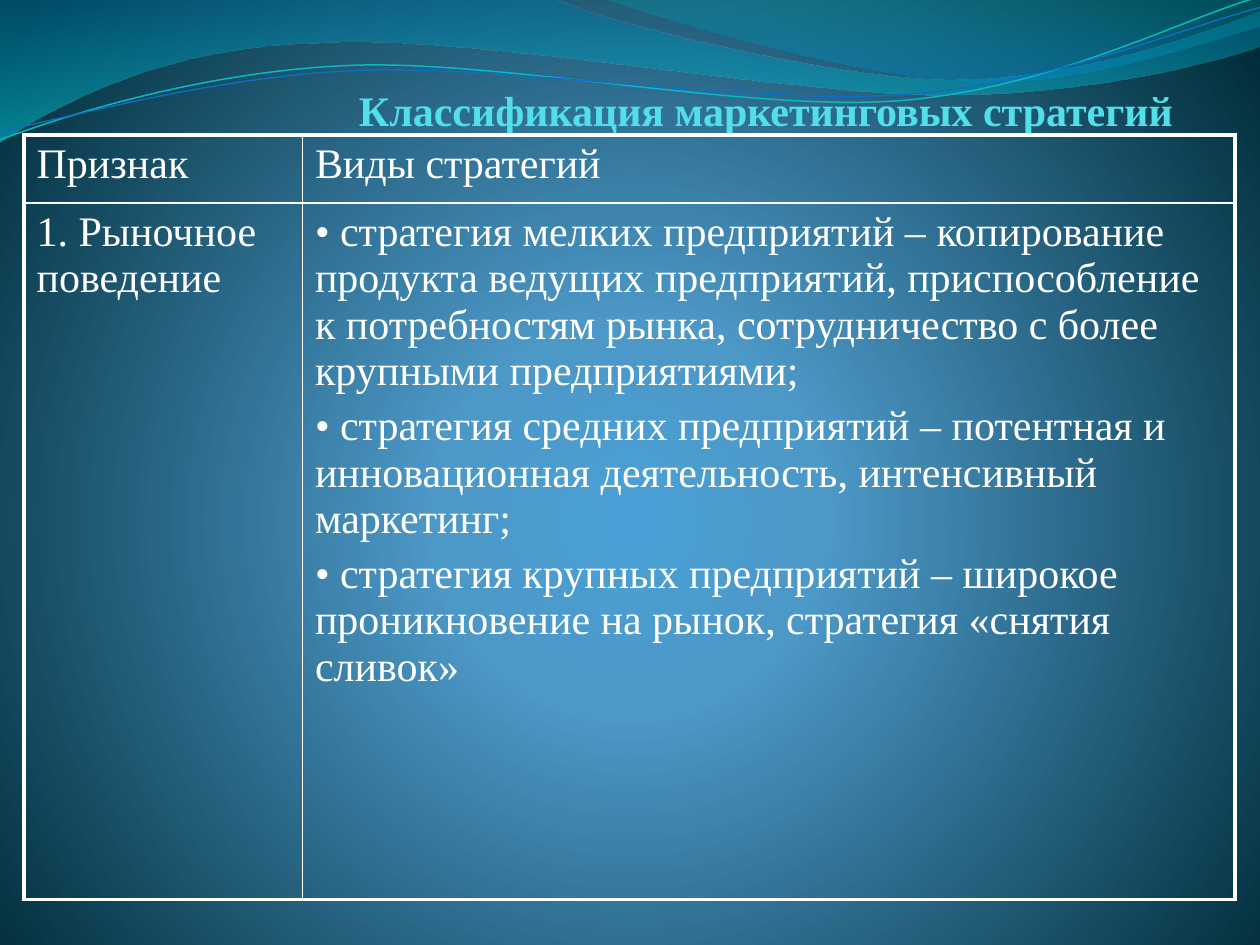
from pptx import Presentation
from pptx import util as u
from pptx.dml.color import RGBColor
from pptx.enum import text
from pptx.oxml import parse_xml
from pptx.oxml.ns import nsdecls, qn

THEME = {
    "font": "Times New Roman", "size": 24, "title": "51E0EA", "body": "FFFFFF",
    "rule": "FFFFFF", "thin": 1, "thick": 2.25,
    "backdrop": [(0, "4AA0D6", 100), (25, "4C98C7", 100), (100, "002C38", 100)],
    "wide wave": [(0, "0074A1", 45), (100, "00C6CF", 55)],
    "right wave": [(0, "00A1A9", 30), (80, "008BBF", 45)],
}
RADIAL = ('<a:path {} path="circle"><a:fillToRect l="10000" t="110000" '
          'r="10000" b="100000"/></a:path>')
DOWNWARD = '<a:lin {} ang="5400000" scaled="1"/>'


def paint_gradient(owner, stops, direction):
    """Replace the stops and direction of the gradient inside an element."""
    gradient = owner.find(".//" + qn("a:gradFill"))
    for child in list(gradient):
        gradient.remove(child)
    marks = ""
    for at, color, opacity in stops:
        alpha = f'<a:alpha val="{opacity * 1000}"/>' if opacity < 100 else ""
        marks += (f'<a:gs pos="{at * 1000}"><a:srgbClr val="{color}">'
                  f'{alpha}</a:srgbClr></a:gs>')
    gradient.append(parse_xml(f'<a:gsLst {nsdecls("a")}>{marks}</a:gsLst>'))
    gradient.append(parse_xml(direction.format(nsdecls("a"))))


def write(frame, *lines, color=THEME["body"], bold=False, bullet=None,
          align=text.PP_ALIGN.LEFT, before=0.2):
    """Fill a text frame, one paragraph a line."""
    for i, line in enumerate(lines):
        paragraph = frame.paragraphs[0] if i == 0 else frame.add_paragraph()
        paragraph.alignment = align
        paragraph.space_before = u.Pt(before * THEME["size"])
        run = paragraph.add_run()
        run.text = line
        run.font.name, run.font.size = THEME["font"], u.Pt(THEME["size"])
        run.font.bold = bold
        run.font.color.rgb = RGBColor.from_string(color)
        if bullet:
            props = paragraph._p.get_or_add_pPr()
            props.set("marL", "0")
            props.set("indent", "0")
            props.append(parse_xml(
                f'<a:buFont {nsdecls("a")} typeface="{THEME["font"]}"/>'))
            props.append(parse_xml(f'<a:buChar {nsdecls("a")} char="{bullet}"/>'))


deck = Presentation()
deck.slide_width, deck.slide_height = u.Inches(10), u.Inches(7.5)
slide = deck.slides.add_slide(deck.slide_layouts[5])

# Background
slide.background.fill.gradient()
paint_gradient(slide.element, THEME["backdrop"], RADIAL)

# Waves: a pair is a straight step, six numbers are a Bézier step
waves = [
    ("wide wave", None, (0, 0), [
        (4.4, -0.01), (4.76, 0.17, 6.64, 0.63, 7.58, 0.63),
        (8.53, 0.63, 9.58, 0.26, 10, 0.09), (10.01, 0.36),
        (9.83, 0.44, 8.7, 0.76, 7.46, 0.75), (6.22, 0.75, 3.82, 0.28, 2.57, 0.34),
        (1.29, 0.36, 0.46, 0.83, -0.01, 1.13), (0, 0)]),
    ("right wave", None, (4.79, -0.01), [
        (5.09, 0.11, 6.82, 0.62, 7.69, 0.65), (8.56, 0.69, 9.61, 0.32, 10, 0.21),
        (10, 0), (4.79, -0.01)]),
    ("0AB8BF", 0.85, (0, 1.11), [
        (0.48, 0.93, 1.58, 0.57, 2.77, 0.52), (3.95, 0.47, 5.93, 0.89, 7.13, 0.8),
        (8.33, 0.71, 9.38, 0.15, 9.98, -0.02)]),
    ("0F6FC6", 0.75, (0, 1.04), [
        (0.47, 0.96, 1.64, 0.61, 2.83, 0.56), (4.03, 0.51, 5.97, 0.84, 7.17, 0.75),
        (8.36, 0.67, 9.41, 0.21, 10, 0.06)]),
]
for paint, width, start, steps in waves:
    points = [(u.Inches(x), u.Inches(y))
              for step in steps for x, y in zip(step[::2], step[1::2])]
    builder = slide.shapes.build_freeform(u.Inches(start[0]), u.Inches(start[1]))
    builder.add_line_segments(points, close=width is None)
    wave = builder.convert_to_shape()

    # Join the three points of each Bézier step into one curve
    segments = iter(wave._element.findall(".//" + qn("a:lnTo")))
    for step in steps:
        first = next(segments)
        if len(step) == 6:
            curve = parse_xml(f'<a:cubicBezTo {nsdecls("a")}/>')
            first.addprevious(curve)
            for segment in (first, next(segments), next(segments)):
                curve.append(segment[0])
                segment.getparent().remove(segment)

    wave.shadow.inherit = False
    if width is None:
        wave.line.fill.background()
        wave.fill.gradient()
        paint_gradient(wave._element, THEME[paint], DOWNWARD)
    else:
        wave.fill.background()
        wave.line.color.rgb = RGBColor.from_string(paint)
        wave.line.width = u.Pt(width)

# Title, in front of the waves
title = slide.shapes.title
slide.shapes._spTree.append(title._element)
title.left, title.top = u.Inches(0.83), u.Inches(0.2)
title.width, title.height = u.Inches(8.5), u.Inches(0.87)
heading = title.text_frame
heading.word_wrap = True
heading.auto_size = text.MSO_AUTO_SIZE.NONE
heading.vertical_anchor = text.MSO_ANCHOR.BOTTOM
heading.margin_left = heading.margin_top = heading.margin_bottom = 0
heading.margin_right = u.Inches(0.02)
write(heading, "Классификация маркетинговых стратегий", color=THEME["title"],
      bold=True, align=text.PP_ALIGN.RIGHT, before=0)

# Strategy table
columns, rows = [2.21, 7.4], [0.54, 5.53]
strategies = slide.shapes.add_table(
    len(rows), len(columns), u.Inches(0.19), u.Inches(1.07),
    u.Inches(sum(columns)), u.Inches(sum(rows))).table
strategies.first_row = strategies.horz_banding = False
for column, width in zip(strategies.columns, columns):
    column.width = u.Inches(width)
for row, height in zip(strategies.rows, rows):
    row.height = u.Inches(height)

write(strategies.cell(0, 0).text_frame, "Признак")
write(strategies.cell(0, 1).text_frame, "Виды стратегий")
write(strategies.cell(1, 0).text_frame, "1. Рыночное поведение")
write(strategies.cell(1, 1).text_frame,
      " стратегия мелких предприятий – копирование продукта ведущих предприятий, "
      "приспособление к потребностям рынка, сотрудничество с более крупными предприятиями;",
      " стратегия средних предприятий – потентная и инновационная деятельность, "
      "интенсивный маркетинг;",
      " стратегия крупных предприятий – широкое проникновение на рынок, "
      "стратегия «снятия сливок»", bullet="•")

# Cell borders: thick outside, thin inside
for r in range(len(rows)):
    for c in range(len(columns)):
        cell = strategies.cell(r, c)
        cell.fill.background()
        props = cell._tc.get_or_add_tcPr()
        outer = {"L": c == 0, "R": c == len(columns) - 1,
                 "T": r == 0, "B": r == len(rows) - 1}
        for i, (side, is_outer) in enumerate(outer.items()):
            weight = u.Pt(THEME["thick" if is_outer else "thin"])
            props.insert(i, parse_xml(
                f'<a:ln{side} {nsdecls("a")} w="{weight}"><a:solidFill>'
                f'<a:srgbClr val="{THEME["rule"]}"/></a:solidFill></a:ln{side}>'))

deck.save("out.pptx")
